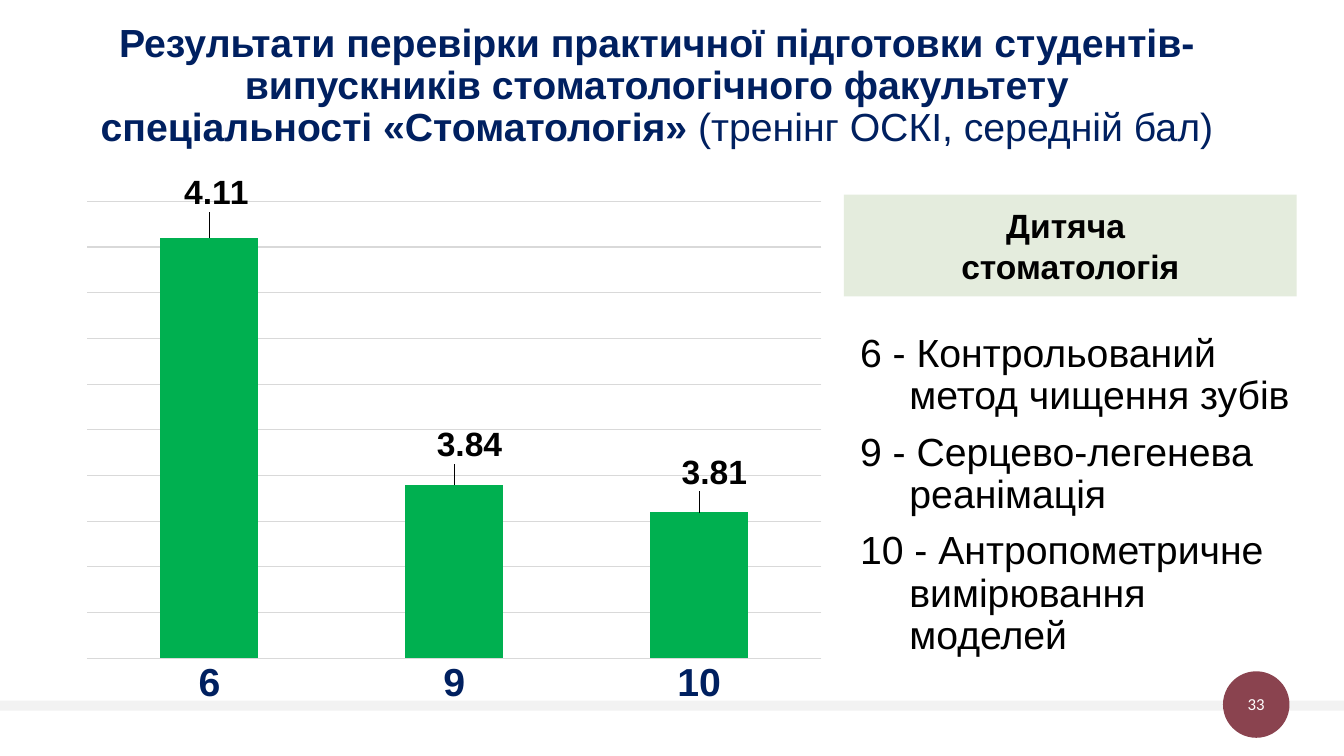
from copy import deepcopy
from dataclasses import dataclass

from lxml import etree
from pptx import Presentation
from pptx.chart.data import CategoryChartData
from pptx.dml.color import RGBColor
from pptx.enum.chart import XL_CHART_TYPE, XL_LABEL_POSITION, XL_TICK_MARK
from pptx.enum.shapes import MSO_SHAPE
from pptx.enum.text import MSO_ANCHOR, MSO_AUTO_SIZE, PP_ALIGN
from pptx.oxml.ns import qn
from pptx.util import Inches, Pt

RECT, OVAL = MSO_SHAPE.RECTANGLE, MSO_SHAPE.OVAL
CENTER, LEFT = PP_ALIGN.CENTER, PP_ALIGN.LEFT
TOP, MIDDLE = MSO_ANCHOR.TOP, MSO_ANCHOR.MIDDLE
NO_FIT = MSO_AUTO_SIZE.NONE
COLUMNS = XL_CHART_TYPE.COLUMN_CLUSTERED
OUTSIDE = XL_LABEL_POSITION.OUTSIDE_END
NO_TICK = XL_TICK_MARK.NONE


@dataclass(frozen=True)
class Theme:
    font: str = "Arial"
    page_font: str = "Calibri"
    navy: str = "002060"
    black: str = "000000"
    white: str = "FFFFFF"
    bar: str = "00B050"
    grid: str = "D9D9D9"
    panel: str = "E4ECDD"
    strip: str = "F2F2F2"
    badge: str = "8A434F"
    large: int = 28
    label: int = 24
    base: int = 18
    small: int = 12


@dataclass(frozen=True)
class Box:
    left: float
    top: float
    width: float
    height: float

    def emu(self) -> tuple:
        return tuple(Inches(v) for v in (self.left, self.top, self.width, self.height))


@dataclass(frozen=True)
class Block:
    box: Box
    kind: int
    fill: str


@dataclass(frozen=True)
class Score:
    station: str
    mark: float
    dx: float  # label shift, as a share of the chart
    dy: float


THEME = Theme()
STRIP = Block(Box(0, 6.95, 13.33, 0.1), RECT, THEME.strip)
BADGE = Block(Box(12.13, 6.66, 0.66, 0.66), OVAL, THEME.badge)
PANEL = Block(Box(8.37, 1.93, 4.49, 1.01), RECT, THEME.panel)
PAGE_BOX = Box(12.13, 6.77, 0.66, 0.43)
TITLE_BOX = Box(0.51, 0.18, 12.11, 1.42)
LIST_BOX = Box(8.43, 3.26, 4.49, 3.6)
CHART_BOX = Box(0.71, 1.73, 7.59, 5.43)
PLOT = {"x": 0.02, "y": 0.047, "w": 0.96, "h": 0.837}
SCORES = [
    Score("6", 4.11, 0.01, -0.04),
    Score("9", 3.84, 0.02, -0.03),
    Score("10", 3.81, 0.02, -0.03),
]
STATIONS = [
    "6 - Контрольований метод чищення зубів",
    "9 - Серцево-легенева реанімація",
    "10 - Антропометричне вимірювання моделей",
]
TITLE = ("Результати перевірки практичної підготовки студентів-випускників "
         "стоматологічного факультету\nспеціальності «Стоматологія» ")
TITLE_TAIL = "(тренінг ОСКІ, середній бал)"


def rgb(color: str) -> RGBColor:
    return RGBColor.from_string(color)


def set_font(font, size: int, color: str, bold: bool = False, name: str = THEME.font) -> None:
    font.size, font.bold, font.name = Pt(size), bold, name
    font.color.rgb = rgb(color)


def style(par, size: int, color: str, bold: bool = False, align=CENTER,
          name: str = THEME.font) -> None:
    """Format a paragraph's runs and give its line breaks the same size."""
    par.alignment = align
    for run in par.runs:
        set_font(run.font, size, color, bold, name)
    for brk in par._p.findall(qn("a:br")):
        brk.append(deepcopy(par.runs[0].font._rPr))


def place(shape, box: Box, anchor=TOP):
    """Move a text shape and return its fixed-size, wrapping frame."""
    shape.left, shape.top, shape.width, shape.height = box.emu()
    frame = shape.text_frame
    frame.word_wrap, frame.auto_size = True, NO_FIT
    frame.vertical_anchor = anchor
    return frame


def add_block(slide, block: Block):
    shape = slide.shapes.add_shape(block.kind, *block.box.emu())
    shape.shadow.inherit = False
    shape.fill.solid()
    shape.fill.fore_color.rgb = rgb(block.fill)
    shape.line.fill.background()
    return shape


def add_title(slide) -> None:
    frame = place(slide.shapes.title, TITLE_BOX)
    frame.margin_left = 0
    par = frame.paragraphs[0]
    par.text = TITLE
    par.add_run().text = TITLE_TAIL
    par.line_spacing = 0.9
    style(par, THEME.large, THEME.navy, True)
    par.runs[-1].font.bold = False


def add_list(slide) -> None:
    frame = place(slide.placeholders[1], LIST_BOX)
    frame.text = "\n".join(STATIONS)
    for par in frame.paragraphs:
        style(par, THEME.large, THEME.black, align=LEFT)
        par.line_spacing, par.space_before = 0.9, Pt(10)
        props = par._p.get_or_add_pPr()
        props.set("marL", str(Inches(0.49)))
        props.set("indent", str(-Inches(0.49)))
        etree.SubElement(props, qn("a:buNone"))


def add_panel(slide) -> None:
    frame = place(add_block(slide, PANEL), PANEL.box, MIDDLE)
    par = frame.paragraphs[0]
    par.text = "Дитяча \nстоматологія"
    par.space_before = Pt(10)
    style(par, THEME.label, THEME.black, True)


def add_page(slide) -> None:
    frame = place(slide.shapes.add_textbox(*PAGE_BOX.emu()), PAGE_BOX, MIDDLE)
    frame.margin_left = frame.margin_right = frame.margin_top = frame.margin_bottom = 0
    frame.text = "33"
    style(frame.paragraphs[0], THEME.small, THEME.white, name=THEME.page_font)


def make_layout(parts: dict, inner: bool = False):
    """Build a manual chart layout from its fractions."""
    layout = etree.Element(qn("c:layout"))
    manual = etree.SubElement(layout, qn("c:manualLayout"))
    if inner:
        modes = {"layoutTarget": "inner", "xMode": "edge", "yMode": "edge"}
        parts = {**modes, **parts}
    for tag, value in parts.items():
        etree.SubElement(manual, qn(f"c:{tag}")).set("val", str(value))
    return layout


def add_scores(slide) -> None:
    data = CategoryChartData(number_format="0.00")
    data.categories = [score.station for score in SCORES]
    data.add_series("Series 1", [score.mark for score in SCORES])
    chart = slide.shapes.add_chart(COLUMNS, *CHART_BOX.emu(), data).chart
    chart.has_legend = chart.has_title = False
    set_font(chart.font, THEME.base, THEME.black)

    axis = chart.category_axis
    axis.major_tick_mark = axis.minor_tick_mark = NO_TICK
    set_font(axis.tick_labels.font, THEME.large, THEME.navy, True)
    marks = chart.value_axis
    marks.visible = False
    marks.minimum_scale, marks.maximum_scale, marks.major_unit = 3.65, 4.15, 0.05
    for line in (axis.format.line, marks.major_gridlines.format.line):
        line.color.rgb, line.width = rgb(THEME.grid), Pt(0.75)

    plot = chart.plots[0]
    plot.gap_width, plot.vary_by_categories = 150, False
    bars = plot.series[0]
    bars.format.fill.solid()
    bars.format.fill.fore_color.rgb = rgb(THEME.bar)
    labels = bars.data_labels
    labels.show_value, labels.position = True, OUTSIDE
    set_font(labels.font, THEME.label, THEME.black, True)
    for index, score in enumerate(SCORES):
        label = bars.points[index].data_label
        set_font(label.font, THEME.label, THEME.black, True)
        label.position = OUTSIDE
        item = labels._element.findall(qn("c:dLbl"))[index]
        item.insert(1, make_layout({"x": score.dx, "y": score.dy}))

    area = chart._chartSpace.chart.plotArea
    for old in area.findall(qn("c:layout")):
        area.remove(old)
    area.insert(0, make_layout(PLOT, True))


def main() -> None:
    deck = Presentation()
    deck.slide_width, deck.slide_height = Inches(13.33), Inches(7.5)
    slide = deck.slides.add_slide(deck.slide_layouts[1])
    for block in (STRIP, BADGE):
        add_block(slide, block)
    add_page(slide)
    add_title(slide)
    add_list(slide)
    add_panel(slide)
    add_scores(slide)
    deck.save("out.pptx")


if __name__ == "__main__":
    main()
